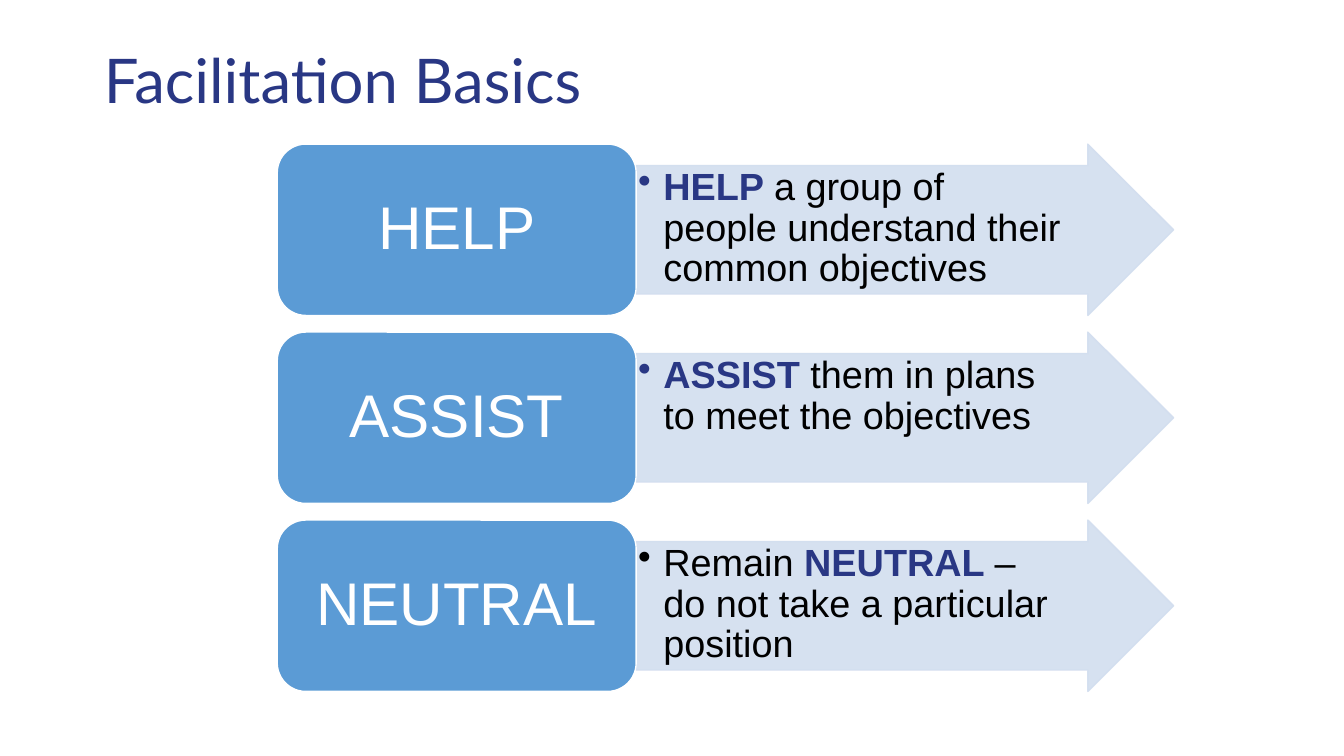
"""Build the Facilitation Basics slide: three labelled arrows."""
from lxml import etree
from pptx import Presentation, util as u
from pptx.dml.color import RGBColor
from pptx.enum import shapes, text
from pptx.oxml.ns import qn

NAVY = RGBColor(0x29, 0x37, 0x84)
BLUE = RGBColor(0x5B, 0x9B, 0xD5)
PALE = RGBColor(0xD2, 0xDE, 0xEF)
WHITE = RGBColor(0xFF, 0xFF, 0xFF)
BLACK = RGBColor(0, 0, 0)

TOP, PITCH, HEIGHT = 1.43, 1.865, 1.7
LABEL_LEFT, LABEL_WIDTH, ARROW_WIDTH = 2.75, 3.56, 5.33

STEPS = [
    ("HELP", [("HELP ", True),
              ("a group of people understand their common objectives", False)]),
    ("ASSIST", [("ASSIST ", True),
                ("them in plans to meet the objectives", False)]),
    ("NEUTRAL", [("Remain ", False), ("NEUTRAL ", True), ("– ", False), None,
                 ("do not take a particular position", False)]),
]


def add_block(kind, left, row, width, fill, line):
    block = slide.shapes.add_shape(kind, u.Inches(left), u.Inches(TOP + row * PITCH),
                                   u.Inches(width), u.Inches(HEIGHT))
    block.shadow.inherit = False
    block.fill.solid()
    block.fill.fore_color.rgb = fill
    block.line.color.rgb = line
    block.line.width = u.Pt(1)
    block.text_frame.word_wrap = True
    return block


def set_margins(frame, left, top, right, bottom):
    frame.margin_left, frame.margin_top = u.Inches(left), u.Inches(top)
    frame.margin_right, frame.margin_bottom = u.Inches(right), u.Inches(bottom)


prs = Presentation()
prs.slide_width, prs.slide_height = u.Inches(13.33), u.Inches(7.5)
slide = prs.slides.add_slide(prs.slide_layouts[5])

title = slide.shapes.title
title.left, title.top = u.Inches(0.93), u.Inches(0.1)
title.width, title.height = u.Inches(11.5), u.Inches(1.45)
title.text_frame.text = "Facilitation Basics"
title.text_frame.auto_size = text.MSO_AUTO_SIZE.NONE
title.text_frame.vertical_anchor = text.MSO_ANCHOR.MIDDLE
set_margins(title.text_frame, 0.1, 0.1, 0.1, 0.1)
heading = title.text_frame.paragraphs[0]
heading.alignment = text.PP_ALIGN.LEFT
heading.line_spacing = 0.9
heading.font.name, heading.font.size = "Lato", u.Pt(44)
heading.font.color.rgb = NAVY

for row, (name, phrases) in enumerate(STEPS):
    arrow = add_block(shapes.MSO_SHAPE.RIGHT_ARROW, LABEL_LEFT + LABEL_WIDTH, row,
                      ARROW_WIDTH, PALE, PALE)
    arrow.adjustments[0], arrow.adjustments[1] = 0.75, 0.5
    for colour in arrow._element.spPr.iter(qn("a:srgbClr")):
        etree.SubElement(colour, qn("a:alpha"), val="90000")
    set_margins(arrow.text_frame, 0.02, 0.02, 0.44, 0.02)
    arrow.text_frame.vertical_anchor = text.MSO_ANCHOR.TOP
    advice = arrow.text_frame.paragraphs[0]
    advice.alignment = text.PP_ALIGN.LEFT
    advice.line_spacing = 0.9
    indent = u.Inches(0.25)
    properties = advice._p.get_or_add_pPr()
    properties.set("marL", str(indent))
    properties.set("indent", str(-indent))
    etree.SubElement(properties, qn("a:buChar"), char="•")
    advice.font.name, advice.font.size = "Arial", u.Pt(27)
    for phrase in phrases:
        if phrase is None:
            advice.add_line_break()
            continue
        wording, strong = phrase
        run = advice.add_run()
        run.text = wording
        run.font.bold = strong
        run.font.color.rgb = NAVY if strong else BLACK

    label = add_block(shapes.MSO_SHAPE.ROUNDED_RECTANGLE, LABEL_LEFT, row,
                      LABEL_WIDTH, BLUE, WHITE)
    set_margins(label.text_frame, 0.18, 0.09, 0.18, 0.09)
    label.text_frame.text = name
    label.text_frame.vertical_anchor = text.MSO_ANCHOR.MIDDLE
    keyword = label.text_frame.paragraphs[0]
    keyword.alignment = text.PP_ALIGN.CENTER
    keyword.line_spacing = 0.9
    keyword.font.name, keyword.font.size = "Arial", u.Pt(43)
    keyword.font.color.rgb = WHITE

prs.save("out.pptx")
